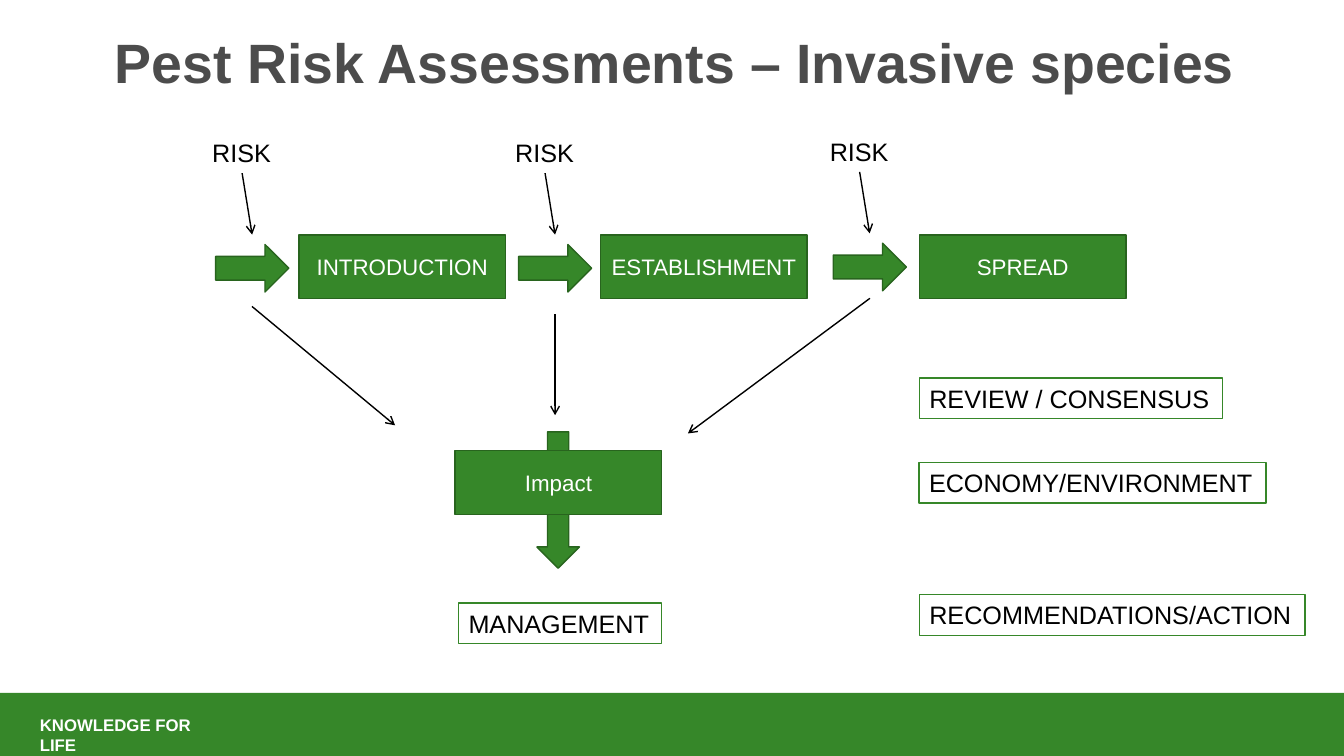
from dataclasses import dataclass

from lxml.etree import SubElement
from pptx import Presentation
from pptx.dml.color import RGBColor
from pptx.enum.shapes import MSO_CONNECTOR as Connector, MSO_SHAPE as Shape
from pptx.enum.text import MSO_ANCHOR as Anchor, MSO_AUTO_SIZE as AutoSize, PP_ALIGN as Align
from pptx.oxml.ns import qn
from pptx.util import Pt

COLOURS = {
    "green": "368729",
    "dark green": "28641E",
    "grey": "4C4C4C",
    "black": "000000",
    "white": "FFFFFF",
}
FONT = "Arial"
STAGE_WIDTH, STAGE_HEIGHT = 147.6, 45.4
LABEL_WIDTH, LABEL_HEIGHT = 56.9, 29.1


@dataclass(frozen=True)
class Stage:
    text: str
    left: float
    top: float


@dataclass(frozen=True)
class Outcome:
    text: str
    left: float
    top: float
    width: float


@dataclass(frozen=True)
class Risk:
    left: float
    top: float


@dataclass(frozen=True)
class Line:
    start: tuple[float, float]
    end: tuple[float, float]


STAGES = [
    Stage("INTRODUCTION", 213.5, 168),
    Stage("ESTABLISHMENT", 429, 168),
    Stage("SPREAD", 656.7, 168),
    Stage("Impact", 325.1, 322),
]
OUTCOMES = [
    Outcome("REVIEW / CONSENSUS", 656.7, 270, 216.7),
    Outcome("MANAGEMENT", 327.6, 430.6, 144.9),
    Outcome("ECONOMY/ENVIRONMENT", 656.5, 330.3, 247.9),
    Outcome("RECOMMENDATIONS/ACTION", 656.7, 424.7, 275.6),
]
RISKS = [Risk(154.1, 174.6), Risk(595.2, 173.7), Risk(370.5, 174.6)]
IMPACT_LINES = [
    Line((180, 218.9), (282.2, 303.8)),
    Line((396.5, 224.6), (396.5, 296.6)),
    Line((621.4, 213.1), (491.4, 309.6)),
]


def colour(name: str) -> RGBColor:
    return RGBColor.from_string(COLOURS[name])


def write(shape, text: str, size: float, colour_name: str, align=Align.LEFT,
          anchor=Anchor.TOP, bold: bool = False, wrap: bool = True, auto_size=AutoSize.NONE):
    frame = shape.text_frame
    frame.word_wrap = wrap
    frame.auto_size = auto_size
    frame.vertical_anchor = anchor
    paragraph = frame.paragraphs[0]
    paragraph.alignment = align
    run = paragraph.add_run()
    run.text = text
    run.font.name = FONT
    run.font.size = Pt(size)
    run.font.bold = bold
    run.font.color.rgb = colour(colour_name)
    return paragraph


def add_block(shapes, kind, left: float, top: float, width: float, height: float,
              fill: str = "green", outline: str | None = "dark green"):
    block = shapes.add_shape(kind, Pt(left), Pt(top), Pt(width), Pt(height))
    block.shadow.inherit = False
    block.fill.solid()
    block.fill.fore_color.rgb = colour(fill)
    if outline:
        block.line.color.rgb = colour(outline)
        block.line.width = Pt(1)
    else:
        block.line.fill.background()
    return block


def add_arrow_line(shapes, line: Line):
    """Add a thin black line with an open arrowhead at its end."""
    connector = shapes.add_connector(Connector.STRAIGHT, *map(Pt, line.start + line.end))
    connector.line.color.rgb = colour("black")
    connector.line.width = Pt(1)
    properties = connector._element.spPr
    SubElement(properties.find(qn("a:ln")), qn("a:tailEnd"), type="arrow")
    SubElement(properties, qn("a:effectLst"))
    return connector


def add_stage(shapes, stage: Stage) -> None:
    block = add_block(shapes, Shape.RECTANGLE, stage.left, stage.top, STAGE_WIDTH, STAGE_HEIGHT)
    write(block, stage.text, 16, "white", Align.CENTER, Anchor.MIDDLE)


def add_outcome(shapes, outcome: Outcome) -> None:
    block = add_block(shapes, Shape.RECTANGLE, outcome.left, outcome.top,
                      outcome.width, LABEL_HEIGHT, "white", "green")
    write(block, outcome.text, 18, "black", wrap=False, auto_size=AutoSize.SHAPE_TO_FIT_TEXT)


def add_risk(shapes, risk: Risk) -> None:
    """Group a block arrow with its label and the line between them."""
    group = shapes.add_group_shape().shapes
    add_block(group, Shape.RIGHT_ARROW, risk.left, risk.top, 52.2, 34)
    label_left, label_top = risk.left - 9.6, risk.top - 80
    label = group.add_textbox(Pt(label_left), Pt(label_top), Pt(LABEL_WIDTH), Pt(LABEL_HEIGHT))
    write(label, "RISK", 18, "black", wrap=False, auto_size=AutoSize.SHAPE_TO_FIT_TEXT)
    start = (label_left + LABEL_WIDTH / 2, label_top + LABEL_HEIGHT)
    connector = add_arrow_line(group, Line(start, (risk.left + 26, risk.top - 7)))
    connector.begin_connect(label, 2)


def add_title(slide) -> None:
    title = slide.shapes.title
    title.left, title.top, title.width, title.height = map(Pt, (74.9, 21.6, 826.6, 90))
    paragraph = write(title, "Pest Risk Assessments – Invasive species", 39.6, "grey", bold=True)
    paragraph.line_spacing = 0.9


def add_footer(shapes) -> None:
    add_block(shapes, Shape.RECTANGLE, 0, 495, 960, 45, outline=None)
    slogan = shapes.add_textbox(Pt(21.4), Pt(506.9), Pt(126.7), Pt(21.8))
    paragraph = write(slogan, "KNOWLEDGE FOR LIFE", 12, "white", bold=True)
    paragraph.space_after = Pt(3)


def main() -> None:
    presentation = Presentation()
    presentation.slide_width, presentation.slide_height = Pt(960), Pt(540)
    slide = presentation.slides.add_slide(presentation.slide_layouts[5])
    shapes = slide.shapes

    add_title(slide)
    add_footer(shapes)
    management_arrow = add_block(shapes, Shape.RIGHT_ARROW, 350, 342, 97.4, 30.4)
    management_arrow.rotation = 90
    for stage in STAGES:
        add_stage(shapes, stage)
    for risk in RISKS:
        add_risk(shapes, risk)
    for line in IMPACT_LINES:
        add_arrow_line(shapes, line)
    for outcome in OUTCOMES:
        add_outcome(shapes, outcome)
    presentation.save("out.pptx")


if __name__ == "__main__":
    main()
